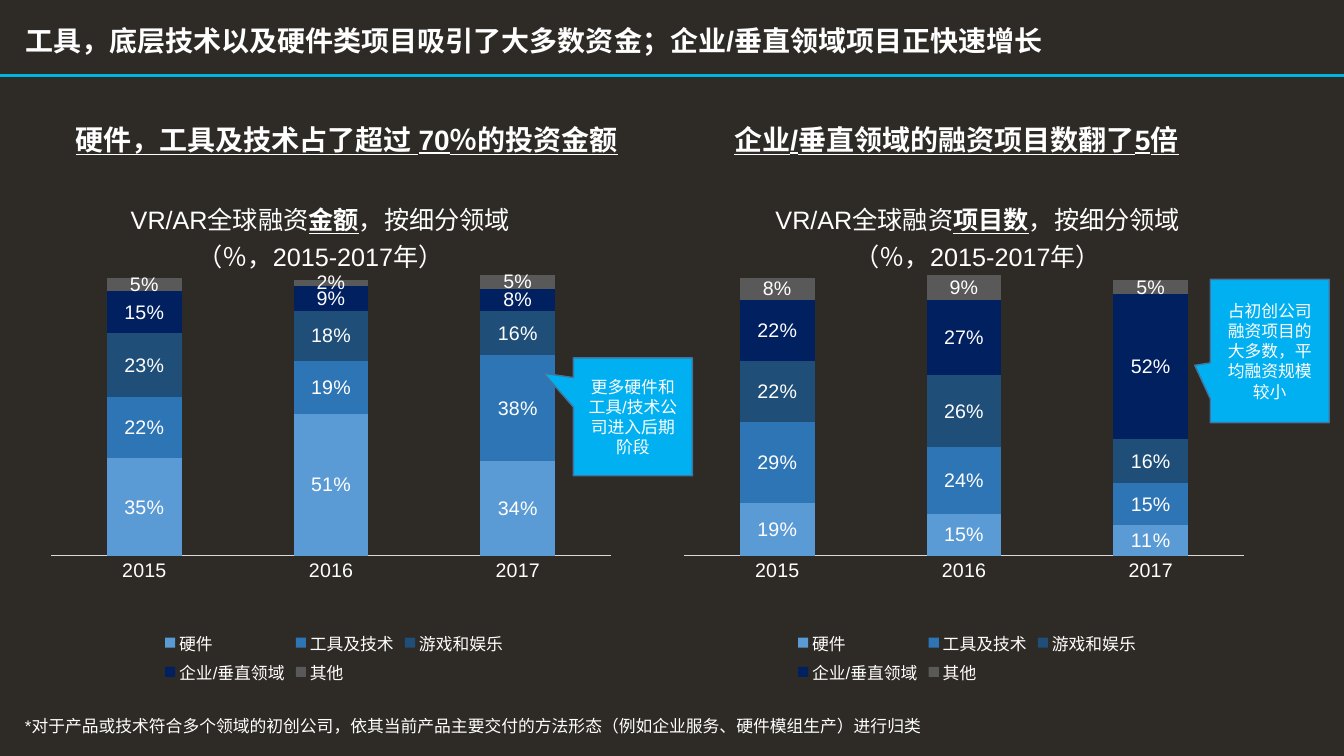
"""Build a slide comparing VR/AR funding amounts and deal counts by segment."""
import dataclasses

import lxml.etree
import pptx
import pptx.chart.data
import pptx.dml.color
import pptx.enum.chart
import pptx.enum.shapes
import pptx.enum.text
import pptx.oxml.ns
import pptx.util

Cm = pptx.util.Cm
Pt = pptx.util.Pt
qn = pptx.oxml.ns.qn
PP_ALIGN = pptx.enum.text.PP_ALIGN
MSO_ANCHOR = pptx.enum.text.MSO_ANCHOR


@dataclasses.dataclass(frozen=True)
class Theme:
    font: str = "Arial"
    background: str = "2E2A25"
    text: str = "FFFFFF"
    rule: str = "00B5E2"
    callout: str = "00B0F0"
    callout_line: str = "43739E"
    axis: str = "D9D9D9"
    segments: tuple = ("5B9BD5", "2E75B6", "1F4E79", "002060", "595959")
    heading_size: int = 20
    chart_title_size: int = 18
    label_size: int = 14
    small_size: int = 12


def rgb(value):
    return pptx.dml.color.RGBColor.from_string(value)


def set_layout(parent, position, **fractions):
    layout = parent.find(qn("c:layout"))
    if layout is None:
        layout = parent.makeelement(qn("c:layout"))
        parent.insert(position, layout)
    manual = lxml.etree.SubElement(layout, qn("c:manualLayout"))
    if "w" in fractions:
        lxml.etree.SubElement(manual, qn("c:layoutTarget")).set("val", "inner")
    for name in ("x", "y"):
        lxml.etree.SubElement(manual, qn(f"c:{name}Mode")).set("val", "edge")
    for name, value in fractions.items():
        lxml.etree.SubElement(manual, qn(f"c:{name}")).set("val", str(value))


class SlideBuilder:
    def __init__(self, presentation, theme):
        self.theme = theme
        self.slide = presentation.slides.add_slide(presentation.slide_layouts[5])
        fill = self.slide.background.fill
        fill.solid()
        fill.fore_color.rgb = rgb(theme.background)

    def style_font(self, font, size, bold=False, underline=False):
        font.name = self.theme.font
        font.size = Pt(size)
        font.bold = bold
        font.underline = underline
        font.color.rgb = rgb(self.theme.text)

    def fill_text(self, shape, text, size, align, anchor=MSO_ANCHOR.TOP, **emphasis):
        frame = shape.text_frame
        frame.text = text
        frame.word_wrap = True
        frame.auto_size = pptx.enum.text.MSO_AUTO_SIZE.NONE
        frame.vertical_anchor = anchor
        for paragraph in frame.paragraphs:
            paragraph.alignment = align
            for run in paragraph.runs:
                self.style_font(run.font, size, **emphasis)

    def title(self, text, left, top, width, height):
        shape = self.slide.shapes.title
        shape.left, shape.top = Cm(left), Cm(top)
        shape.width, shape.height = Cm(width), Cm(height)
        self.fill_text(shape, text, self.theme.heading_size, PP_ALIGN.LEFT, bold=True)

    def text(self, text, left, top, width, height, size, align=PP_ALIGN.LEFT, **emphasis):
        shape = self.slide.shapes.add_textbox(Cm(left), Cm(top), Cm(width), Cm(height))
        self.fill_text(shape, text, size, align, **emphasis)

    def rule(self, top, width):
        connector = self.slide.shapes.add_connector(
            pptx.enum.shapes.MSO_CONNECTOR.STRAIGHT, 0, Cm(top), Cm(width), Cm(top))
        connector.line.color.rgb = rgb(self.theme.rule)
        connector.line.width = Pt(2.25)
        lxml.etree.SubElement(connector.element.find(qn("p:spPr")), qn("a:effectLst"))

    def callout(self, text, left, top, width, height, pointer):
        shape = self.slide.shapes.add_shape(
            pptx.enum.shapes.MSO_SHAPE.RECTANGULAR_CALLOUT,
            Cm(left), Cm(top), Cm(width), Cm(height))
        shape.adjustments[0], shape.adjustments[1] = pointer
        shape.shadow.inherit = False
        shape.fill.solid()
        shape.fill.fore_color.rgb = rgb(self.theme.callout)
        shape.line.color.rgb = rgb(self.theme.callout_line)
        shape.line.width = Pt(1)
        self.fill_text(shape, text, self.theme.small_size, PP_ALIGN.CENTER, MSO_ANCHOR.MIDDLE)

    def chart_title(self, chart, measure, left):
        title = chart.chart_title
        frame = title.text_frame
        frame.text = "VR/AR全球融资"
        first = frame.paragraphs[0]
        for text in (measure, "，按细分领域"):
            first.add_run().text = text
        frame.add_paragraph().text = "（％，2015-2017年）"
        for paragraph in frame.paragraphs:
            paragraph.alignment = PP_ALIGN.CENTER
            for run in paragraph.runs:
                key = run.text == measure
                self.style_font(run.font, self.theme.chart_title_size, key, key)
        title.include_in_layout = False
        set_layout(title.element, 1, x=left, y=0.07)

    def stacked_chart(self, measure, title_left, series_values, left, top, width, height):
        theme = self.theme
        data = pptx.chart.data.CategoryChartData(number_format="0%")
        data.categories = YEARS
        for name, values in zip(SEGMENTS, series_values):
            data.add_series(name, values)
        chart = self.slide.shapes.add_chart(
            pptx.enum.chart.XL_CHART_TYPE.COLUMN_STACKED,
            Cm(left), Cm(top), Cm(width), Cm(height), data).chart
        self.style_font(chart.font, theme.label_size)
        self.chart_title(chart, measure, title_left)
        set_layout(chart.element.find(".//" + qn("c:plotArea")), 0,
                   x=0.02, y=0.12, w=0.95, h=0.63)

        chart.has_legend = True
        chart.legend.position = pptx.enum.chart.XL_LEGEND_POSITION.BOTTOM
        chart.legend.include_in_layout = False
        self.style_font(chart.legend.font, theme.small_size)

        value_axis = chart.value_axis
        value_axis.visible = False
        value_axis.has_major_gridlines = False
        value_axis.minimum_scale, value_axis.maximum_scale = 0, 1.2
        category_axis = chart.category_axis
        category_axis.major_tick_mark = pptx.enum.chart.XL_TICK_MARK.NONE
        category_axis.format.line.color.rgb = rgb(theme.axis)
        category_axis.format.line.width = Pt(0.75)
        self.style_font(category_axis.tick_labels.font, theme.label_size)

        plot = chart.plots[0]
        plot.gap_width, plot.overlap = 150, 100
        plot.vary_by_categories = False
        for series, color in zip(plot.series, theme.segments):
            series.format.fill.solid()
            series.format.fill.fore_color.rgb = rgb(color)
            labels = series.data_labels
            labels.show_value = True
            labels.number_format = "0%"
            labels.number_format_is_linked = False
            labels.position = pptx.enum.chart.XL_LABEL_POSITION.CENTER
            self.style_font(labels.font, theme.label_size)


YEARS = ("2015", "2016", "2017")
SEGMENTS = ("硬件", "工具及技术", "游戏和娱乐", "企业/垂直领域", "其他")
AMOUNTS = ((0.35, 0.51, 0.34), (0.22, 0.19, 0.38), (0.23, 0.18, 0.16),
           (0.15, 0.09, 0.08), (0.05, 0.02, 0.05))
DEALS = ((0.19, 0.15, 0.11), (0.29, 0.24, 0.15), (0.22, 0.26, 0.16),
         (0.22, 0.27, 0.52), (0.08, 0.09, 0.05))


def main():
    presentation = pptx.Presentation()
    presentation.slide_width, presentation.slide_height = Cm(33.87), Cm(19.05)
    theme = Theme()
    builder = SlideBuilder(presentation, theme)
    builder.rule(1.9, 33.87)
    builder.title("工具，底层技术以及硬件类项目吸引了大多数资金；企业/垂直领域项目正快速增长",
                  0.38, 0.46, 27.94, 1.12)
    panels = (
        ("硬件，工具及技术占了超过 70％的投资金额", 0.69, 16.1, "金额", 0.15, AMOUNTS, 0.99),
        ("企业/垂直领域的融资项目数翻了5倍", 18.21, 11.79, "项目数", 0.17, DEALS, 16.94),
    )
    for heading, left, width, measure, title_left, values, chart_left in panels:
        builder.stacked_chart(measure, title_left, values, chart_left, 3.99, 14.86, 13.36)
        builder.text(heading, left, 2.95, width, 1.12, theme.heading_size,
                     PP_ALIGN.CENTER, bold=True, underline=True)
    builder.callout("占初创公司融资项目的大多数，平均融资规模较小",
                    30.5, 7.04, 3, 3.61, (-0.63, 0.1))
    builder.callout("更多硬件和工具/技术公司进入后期阶段",
                    14.45, 9.02, 3, 2.97, (-0.75, -0.37))
    builder.text("*对于产品或技术符合多个领域的初创公司，依其当前产品主要交付的方法形态（例如企业服务、硬件模组生产）进行归类",
                 0.38, 17.91, 26.92, 0.76, theme.small_size)
    presentation.save("out.pptx")


if __name__ == "__main__":
    main()
